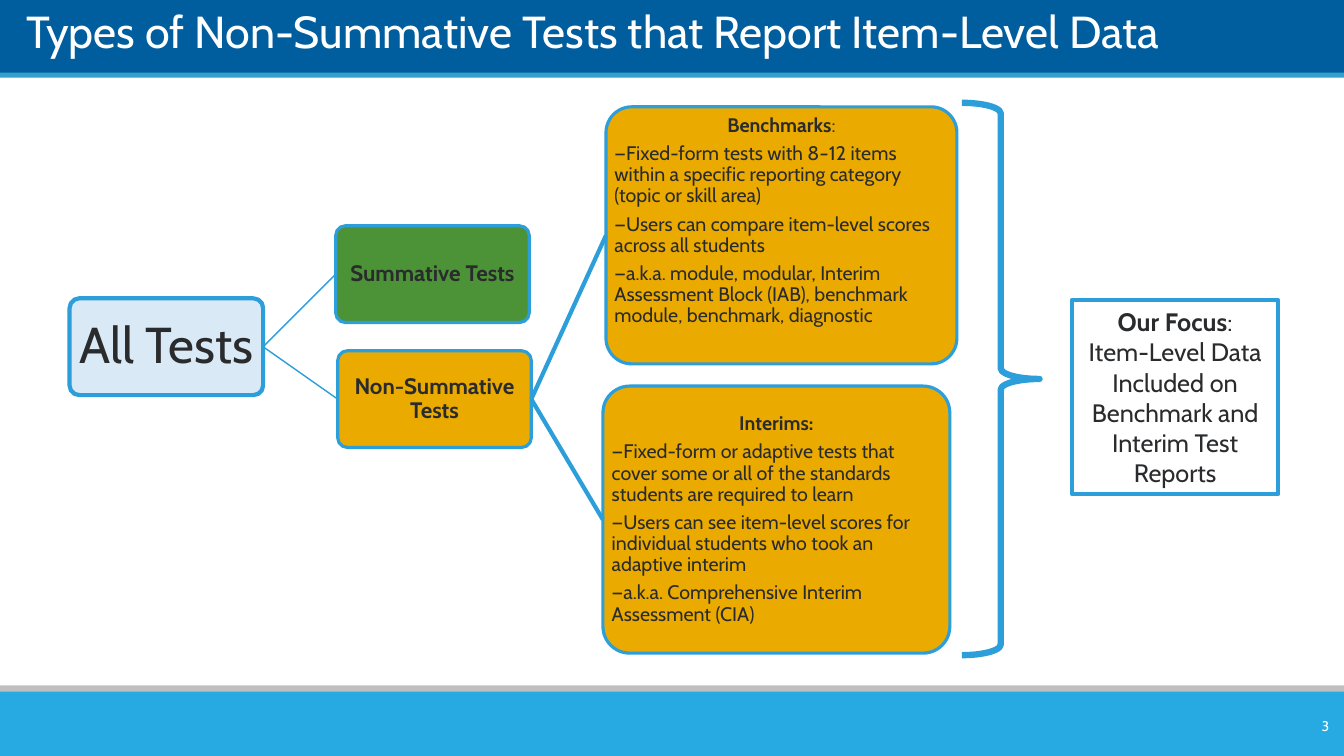
from collections import namedtuple

from lxml import etree
from pptx import Presentation
from pptx.dml.color import RGBColor
from pptx.enum.shapes import MSO_CONNECTOR, MSO_SHAPE
from pptx.enum.text import MSO_ANCHOR, PP_ALIGN
from pptx.oxml.ns import qn
from pptx.util import Inches, Pt

RECTANGLE = MSO_SHAPE.RECTANGLE
ROUNDED = MSO_SHAPE.ROUNDED_RECTANGLE
BRACE = MSO_SHAPE.RIGHT_BRACE
STRAIGHT = MSO_CONNECTOR.STRAIGHT
LEFT, CENTER, RIGHT = PP_ALIGN.LEFT, PP_ALIGN.CENTER, PP_ALIGN.RIGHT
MIDDLE, BOTTOM = MSO_ANCHOR.MIDDLE, MSO_ANCHOR.BOTTOM
LEFT_SITE, RIGHT_SITE = 1, 3

NAVY = RGBColor(0x00, 0x5E, 0x9E)
STRIPE = RGBColor(0x35, 0xA0, 0xCE)
GRAY = RGBColor(0xBF, 0xBF, 0xBF)
SKY = RGBColor(0x27, 0xAA, 0xE1)
OUTLINE = RGBColor(0x2C, 0x9E, 0xD9)
PALE = RGBColor(0xDA, 0xE9, 0xF6)
GOLD = RGBColor(0xEA, 0xAA, 0x00)
GREEN = RGBColor(0x4C, 0x92, 0x37)
INK = RGBColor(0x2A, 0x2B, 0x2D)
WHITE = RGBColor(0xFF, 0xFF, 0xFF)

FONT = "Cabin"
SLIDE_WIDTH, SLIDE_HEIGHT = Inches(13.33), Inches(7.5)
COLUMN, ROW = SLIDE_WIDTH / 100, SLIDE_HEIGHT / 100

Box = namedtuple("Box", "column row columns rows")

BENCHMARKS = [
    (CENTER, [("Benchmarks", True), (":", False)]),
    (LEFT, [("—Fixed-form tests with 8", False), ("–", False, True),
            ("12 items within a specific reporting category (topic or skill area)", False)]),
    (LEFT, [("—Users can compare item-level scores across all students", False)]),
    (LEFT, [("—a.k.a. module, modular, Interim Assessment Block (IAB), "
             "benchmark module, benchmark, diagnostic", False)]),
]
INTERIMS = [
    (CENTER, [("Interims:", True)]),
    (LEFT, [("—Fixed-form or adaptive tests that cover some or all of the standards "
             "students are required to learn", False)]),
    (LEFT, [("—Users can see item-level scores for individual students "
             "who took an adaptive interim", False)]),
    (LEFT, [("—a.k.a. Comprehensive Interim Assessment (CIA)", False)]),
]
FOCUS = [
    (CENTER, [("Our Focus", True), (":", False)]),
    (CENTER, [("Item-Level Data Included on Benchmark and Interim Test Reports", False)]),
]


def within(box, column, row, columns, rows):
    return Box(box.column + column, box.row + row, columns, rows)


def place(box):
    return [round(length) for length in (box.column * COLUMN, box.row * ROW,
                                         box.columns * COLUMN, box.rows * ROW)]


def add_box(slide, kind, box, fill=None, line_width=0):
    shape = slide.shapes.add_shape(kind, *place(box))
    shape.shadow.inherit = False
    if fill is None:
        shape.fill.background()
    else:
        shape.fill.solid()
        shape.fill.fore_color.rgb = fill
    if line_width:
        shape.line.color.rgb = OUTLINE
        shape.line.width = Pt(line_width)
    else:
        shape.line.fill.background()
    return shape


def write(shape, paragraphs, size, color=INK, anchor=MIDDLE, insets=(0, 0, 0, 0),
          line_spacing=1.0, gap=0):
    frame = shape.text_frame
    frame.word_wrap = True
    frame.vertical_anchor = anchor
    (frame.margin_left, frame.margin_top,
     frame.margin_right, frame.margin_bottom) = map(Inches, insets)
    for index, (alignment, runs) in enumerate(paragraphs):
        paragraph = frame.paragraphs[0] if index == 0 else frame.add_paragraph()
        paragraph.alignment = alignment
        paragraph.line_spacing = line_spacing
        paragraph.space_after = Pt(gap)
        for text, bold, *italic in runs:
            run = paragraph.add_run()
            run.text = text
            run.font.name = FONT
            run.font.size = Pt(size)
            run.font.bold = bold
            run.font.italic = bool(italic)
            run.font.color.rgb = color


def add_header(slide, box, title):
    add_box(slide, RECTANGLE, within(box, 0, 0, box.columns, 9.87), NAVY)
    add_box(slide, RECTANGLE, within(box, 0, 9.6, box.columns, 0.67), STRIPE)
    heading = slide.shapes.add_textbox(*place(within(box, 1.95, 0, 90.4, 7.6)))
    write(heading, [(LEFT, [(title, False)])], 32, WHITE, BOTTOM)


def add_footer(slide, box, number):
    add_box(slide, RECTANGLE, within(box, 0, 0, box.columns, 1.87), GRAY)
    add_box(slide, RECTANGLE, within(box, 0, 0.8, box.columns, box.rows - 0.8), SKY)
    page = slide.shapes.add_textbox(*place(within(box, 93.85, 3.33, 5.78, 4)))
    write(page, [(RIGHT, [(number, False)])], 10, WHITE, insets=(0.1, 0.05, 0.1, 0.05))


def add_node(slide, box, fill, paragraphs, size, line_width=2.25, inset=0.01, lift=0):
    node = add_box(slide, ROUNDED, box, fill, line_width)
    node.adjustments[0] = 0.1
    write(node, paragraphs, size, insets=(inset, inset, inset, inset + lift),
          line_spacing=0.9, gap=5)
    return node


def add_branch(slide, parent, child, line_width):
    branch = slide.shapes.add_connector(STRAIGHT, 0, 0, 0, 0)
    branch.begin_connect(parent, RIGHT_SITE)
    branch.end_connect(child, LEFT_SITE)
    branch.line.color.rgb = OUTLINE
    branch.line.width = Pt(line_width)
    etree.SubElement(branch.element.spPr, qn("a:effectLst"))


def add_test_tree(slide, box):
    label = (14.4, 12.8)
    all_tests = add_node(slide, within(box, 0, 25.87, *label), PALE,
                         [(CENTER, [("All Tests", False)])], 36, 3, 0.03)
    summative = add_node(slide, within(box, 19.8, 16.27, *label), GREEN,
                         [(CENTER, [("Summative Tests", True)])], 16)
    non_summative = add_node(slide, within(box, 19.95, 32.8, *label), GOLD,
                             [(CENTER, [("Non-Summative Tests", True)])], 16)
    benchmarks = add_node(slide, within(box, 39.91, 0.53, 26.11, 34), GOLD,
                          BENCHMARKS, 14, lift=0.28)
    interims = add_node(slide, within(box, 39.68, 37.47, 25.81, 35.33), GOLD, INTERIMS, 14)
    for parent, child, line_width in [(all_tests, summative, 1), (all_tests, non_summative, 1),
                                      (non_summative, benchmarks, 3),
                                      (non_summative, interims, 3)]:
        add_branch(slide, parent, child, line_width)


def add_focus(slide, box):
    brace = add_box(slide, BRACE, within(box, 0, 0, 5.78, box.rows), line_width=4.5)
    brace.adjustments[0] = 0.137
    brace.adjustments[1] = 0.5
    focus = add_box(slide, RECTANGLE, within(box, 8.17, 26.13, 15.38, 25.6), line_width=3)
    write(focus, FOCUS, 18, insets=(0.1, 0.05, 0.1, 0.05))


def main():
    presentation = Presentation()
    presentation.slide_width, presentation.slide_height = SLIDE_WIDTH, SLIDE_HEIGHT
    slide = presentation.slides.add_slide(presentation.slide_layouts[6])
    add_header(slide, Box(0, 0, 100, 10.27),
               "Types of Non-Summative Tests that Report Item-Level Data")
    add_footer(slide, Box(0, 90.67, 100, 9.33), "3")
    add_test_tree(slide, Box(5.18, 13.6, 66.02, 73.07))
    add_focus(slide, Box(71.57, 13.6, 23.55, 73.07))
    presentation.save("out.pptx")


if __name__ == "__main__":
    main()
